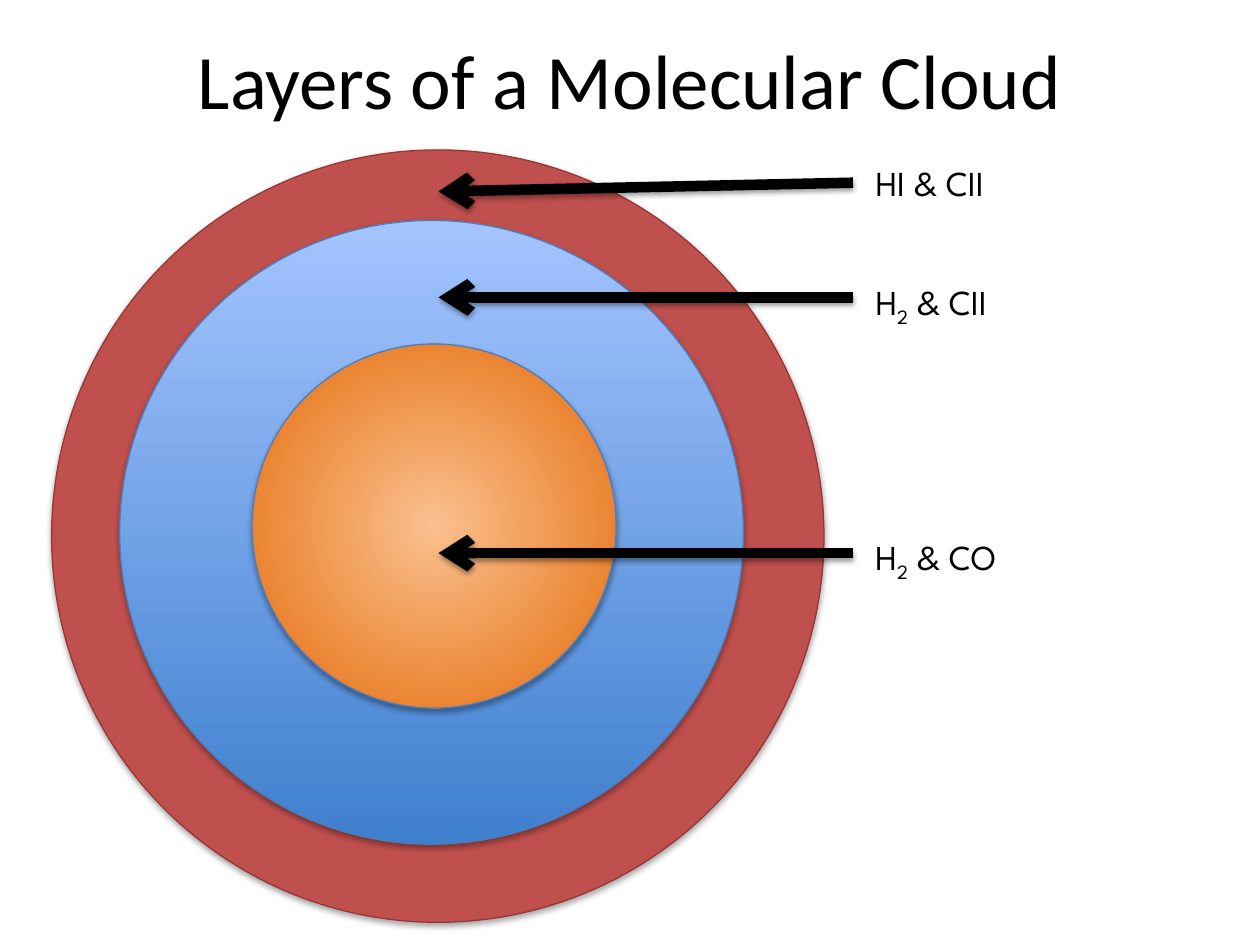
from dataclasses import dataclass

from pptx import Presentation
from pptx.dml.color import RGBColor
from pptx.enum import shapes, text
from pptx.oxml import ns, parse_xml
from pptx.util import Pt

PX = 9144
NS = ns.nsdecls("a")
BLACK = "000000"


@dataclass
class Layer:
    left: int
    top: int
    size: int
    fills: list[str]
    edge: str
    radial: bool = False


@dataclass
class Label:
    words: list[str]
    top: int
    width: int
    start: int
    end: int


LAYERS = [
    Layer(41, 119, 613, ["C0504D"], "953735"),
    Layer(95, 175, 495, ["3F80CE", "A4C4FF"], "4B7EBC"),
    Layer(200, 273, 289, ["FAC090", "E46C0A"], "4B7EBC", True),
]
LABELS = [
    Label(["HI & CII"], 123, 118, 145, 152),
    Label(["H", "2", " & CII"], 218, 122, 236, 236),
    Label(["H", "2", " & CO"], 420, 134, 439, 439),
]


def px(*nums: int) -> list[int]:
    return [n * PX for n in nums]


def color(code: str) -> RGBColor:
    return RGBColor.from_string(code)


def style(font, name: str, size: int) -> None:
    font.name = name
    font.size = Pt(size)
    font.color.rgb = color(BLACK)


def stroke(line, code: str, width: float) -> None:
    line.color.rgb = color(code)
    line.width = Pt(width)


def shade(shape, alpha: int, dist: float) -> None:
    shape._element.spPr.append(parse_xml(
        f'<a:effectLst {NS}><a:outerShdw blurRad="{Pt(3.1)}" dist="{Pt(dist)}" '
        f'dir="5400000" rotWithShape="0"><a:srgbClr val="{BLACK}">'
        f'<a:alpha val="{alpha * 1000}"/></a:srgbClr></a:outerShdw></a:effectLst>'))


def draw_layer(slide, layer: Layer) -> None:
    disc = slide.shapes.add_shape(
        shapes.MSO_SHAPE.OVAL, *px(layer.left, layer.top, layer.size, layer.size))
    fill = disc.fill
    if len(layer.fills) == 1:
        fill.solid()
        fill.fore_color.rgb = color(layer.fills[0])
    else:
        fill.gradient()
        fill.gradient_angle = 90
        for stop, code in zip(fill.gradient_stops, layer.fills):
            stop.color.rgb = color(code)
    if layer.radial:
        lin = disc._element.spPr.find(".//" + ns.qn("a:lin"))
        lin.getparent().replace(lin, parse_xml(
            f'<a:path {NS} path="circle"><a:fillToRect l="50000" t="50000" '
            'r="50000" b="50000"/></a:path>'))
    stroke(disc.line, layer.edge, 0.75)
    shade(disc, 35, 1.8)


def draw_label(slide, label: Label) -> None:
    arrow = slide.shapes.add_connector(
        shapes.MSO_CONNECTOR.STRAIGHT, *px(677, label.start, 348, label.end))
    stroke(arrow.line, BLACK, 6)
    line = arrow._element.spPr.find(ns.qn("a:ln"))
    line.append(parse_xml(f'<a:tailEnd {NS} type="arrow"/>'))
    shade(arrow, 38, 1.6)

    frame = slide.shapes.add_textbox(*px(685, label.top, label.width, 44)).text_frame
    frame.word_wrap = False
    frame.auto_size = text.MSO_AUTO_SIZE.SHAPE_TO_FIT_TEXT
    para = frame.paragraphs[0]
    style(para.font, "League Spartan", 20)
    for word in label.words:
        run = para.add_run()
        run.text = word
        if word == "2":
            run._r.get_or_add_rPr().set("baseline", "-25000")


def draw_title(slide, words: str) -> None:
    title = slide.shapes.title
    title.left, title.top, title.width, title.height = px(50, 0, 900, 125)
    frame = title.text_frame
    frame.text = words
    frame.vertical_anchor = text.MSO_ANCHOR.MIDDLE
    para = frame.paragraphs[0]
    para.alignment = text.PP_ALIGN.CENTER
    style(para.font, "Calibri", 44)


def main() -> None:
    deck = Presentation()
    deck.slide_width, deck.slide_height = px(1000, 750)
    slide = deck.slides.add_slide(deck.slide_layouts[5])
    draw_title(slide, "Layers of a Molecular Cloud")
    for layer in LAYERS:
        draw_layer(slide, layer)
    for label in LABELS:
        draw_label(slide, label)
    deck.save("out.pptx")


if __name__ == "__main__":
    main()
